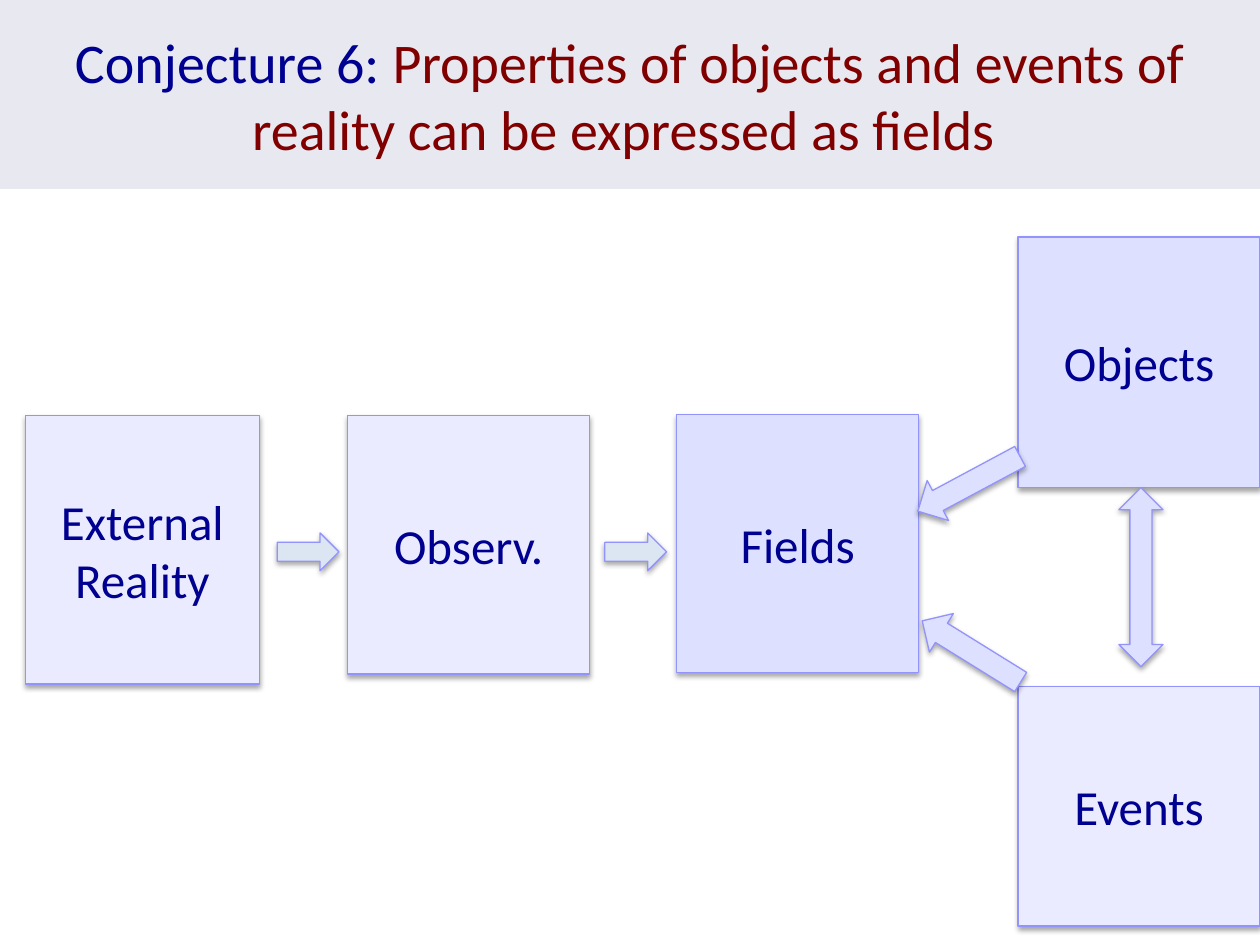
from lxml import etree
from pptx import Presentation
from pptx import util as u
from pptx.dml.color import RGBColor
from pptx.enum import shapes, text
from pptx.oxml import ns

THEME = {
    "font": "Calibri", "title_size": 32, "box_size": 28, "line_width": 0.75,
    "navy": "000090", "maroon": "800000", "band": "E8E8F1", "line": "9393FC",
    "pale": "EBEBFF", "lilac": "DDE1FF", "ice": "DCE6F2",
}
SHADOW = {"blurRad": u.Pt(3.1), "dist": u.Pt(1.8), "dir": 90 * 60000,
          "algn": "ctr", "rotWithShape": 0}
SHADOW_ALPHA = 35000
WIDTH, HEIGHT = 10, 7.5
BOX_WIDTH = 1.92
RIGHT = WIDTH - BOX_WIDTH  # left edge of the last column
KIND = shapes.MSO_SHAPE

TITLE = [("Conjecture 6: ", "navy"),
         ("Properties of objects and events of reality can be expressed as fields ", "maroon")]
# text, fill, left, top, width, height
BOXES = [
    ("External Reality", "pale", 0.2, 3.3, 1.86, 2.13),
    ("Observ.", "pale", 2.76, 3.3, BOX_WIDTH, 2.05),
    ("Fields", "lilac", 5.37, 3.29, BOX_WIDTH, 2.05),
    ("Objects", "lilac", RIGHT, 1.88, BOX_WIDTH, 1.99),
    ("Events", "pale", RIGHT, 5.45, BOX_WIDTH, 1.9),
]
# kind, fill, centre x, centre y, width, height, rotation
ARROWS = [
    (KIND.RIGHT_ARROW, "ice", 2.445, 4.38, 0.49, 0.3, 0),
    (KIND.RIGHT_ARROW, "ice", 5.045, 4.38, 0.49, 0.3, 0),
    (KIND.RIGHT_ARROW, "lilac", 7.69, 3.84, 0.92, 0.36, 151.8),
    (KIND.RIGHT_ARROW, "lilac", 7.71, 5.17, 0.92, 0.36, 211.8),
    (KIND.UP_DOWN_ARROW, "lilac", 9.055, 4.58, 0.35, 1.42, 0),
]


def color(name):
    return RGBColor.from_string(THEME[name])


def add_shadow(shape):
    effects = shape._element.spPr.find(ns.qn("a:effectLst"))
    outer = etree.SubElement(effects, ns.qn("a:outerShdw"),
                             {key: str(value) for key, value in SHADOW.items()})
    black = etree.SubElement(outer, ns.qn("a:srgbClr"), val="000000")
    etree.SubElement(black, ns.qn("a:alpha"), val=str(SHADOW_ALPHA))


def add_part(page, kind, fill, *place, outlined=True):
    shape = page.shapes.add_shape(kind, *map(u.Inches, place))
    shape.shadow.inherit = False
    shape.fill.solid()
    shape.fill.fore_color.rgb = color(fill)
    if outlined:
        shape.line.color.rgb = color("line")
        shape.line.width = u.Pt(THEME["line_width"])
        add_shadow(shape)
    else:
        shape.line.fill.background()
    return shape


def write(shape, spans, size):
    frame = shape.text_frame
    frame.word_wrap = True
    frame.vertical_anchor = text.MSO_ANCHOR.MIDDLE
    para = frame.paragraphs[0]
    para.alignment = text.PP_ALIGN.CENTER
    for words, tint in spans:
        span = para.add_run()
        span.text = words
        for name, value in {"name": THEME["font"], "size": u.Pt(size)}.items():
            setattr(span.font, name, value)
        span.font.color.rgb = color(tint)


def main():
    deck = Presentation()
    deck.slide_width, deck.slide_height = u.Inches(WIDTH), u.Inches(HEIGHT)
    page = deck.slides.add_slide(deck.slide_layouts[6])

    # Boxes of the diagram
    for label, fill, *place in BOXES:
        box = add_part(page, KIND.RECTANGLE, fill, *place)
        write(box, [(label, "navy")], THEME["box_size"])

    # Arrows, placed by their centres
    for kind, fill, x, y, width, height, turn in ARROWS:
        arrow = add_part(page, kind, fill, x - width / 2, y - height / 2, width, height)
        arrow.rotation = turn

    # Title band
    band = add_part(page, KIND.RECTANGLE, "band", 0, 0, WIDTH, HEIGHT / 5, outlined=False)
    write(band, TITLE, THEME["title_size"])

    deck.save("out.pptx")


if __name__ == "__main__":
    main()
